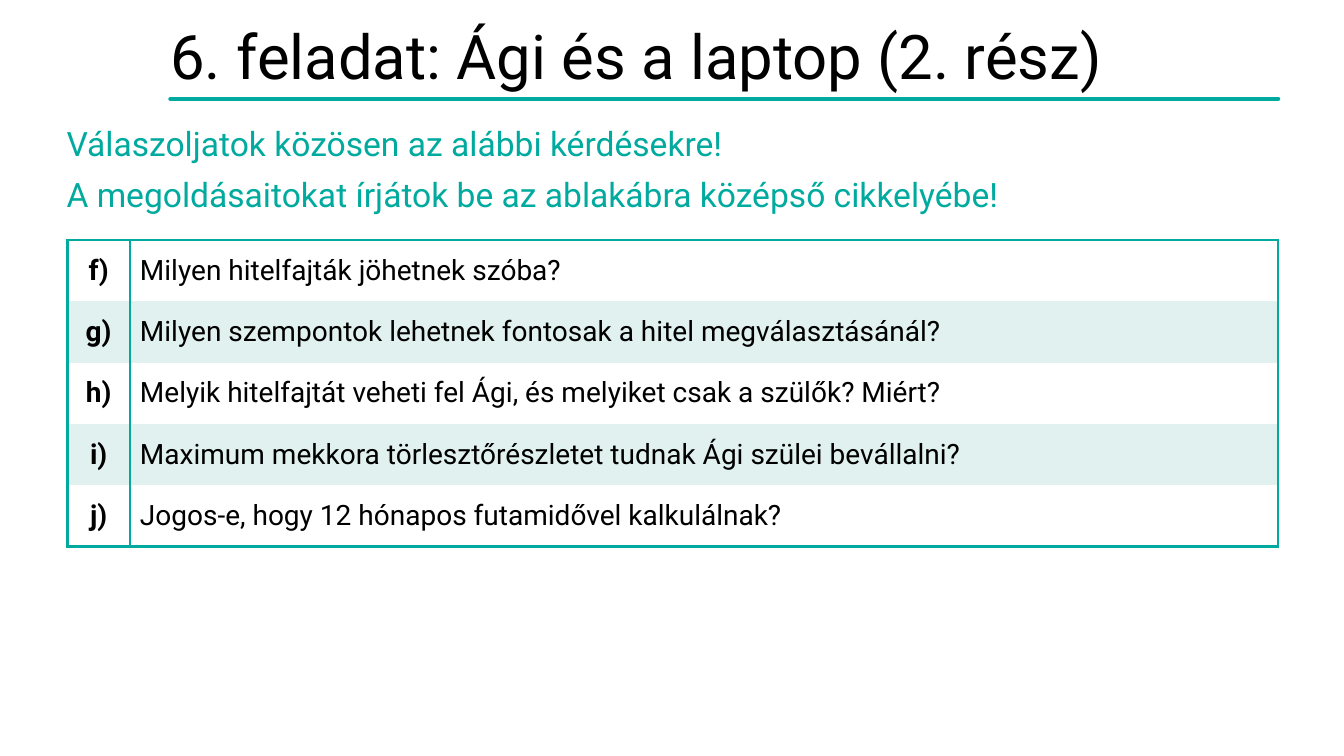
from dataclasses import dataclass

from lxml import etree
from pptx import Presentation
from pptx.dml.color import RGBColor
from pptx.enum.shapes import MSO_CONNECTOR
from pptx.enum.text import MSO_ANCHOR, PP_ALIGN
from pptx.oxml.ns import qn
from pptx.util import Pt

STRAIGHT = MSO_CONNECTOR.STRAIGHT
TOP, MIDDLE = MSO_ANCHOR.TOP, MSO_ANCHOR.MIDDLE
LEFT, CENTER = PP_ALIGN.LEFT, PP_ALIGN.CENTER

FONT = "Roboto"
COLORS = {"teal": "00AA9F", "mint": "E0F1EF", "white": "FFFFFF", "black": "000000"}
NO_STYLE = "{2D5ABB26-0587-4C30-8999-92F81FD0307C}"
BORDER = 2.25


@dataclass
class TextBlock:
    box: tuple[float, float, float, float]
    lines: list[str]
    size: float
    color: str
    anchor: int


@dataclass
class Question:
    label: str
    text: str


TEXTS = [
    TextBlock((47.5, 91.4, 865.4, 64), [
        "Válaszoljatok közösen az alábbi kérdésekre!",
        "A megoldásaitokat írjátok be az ablakábra középső cikkelyébe!",
    ], 24, "teal", TOP),
    TextBlock((121.7, 23.8, 790.6, 36.7), ["6. feladat: Ági és a laptop (2. rész)"],
              44, "black", MIDDLE),
]
QUESTIONS = [
    Question("f)", "Milyen hitelfajták jöhetnek szóba?"),
    Question("g)", "Milyen szempontok lehetnek fontosak a hitel megválasztásánál?"),
    Question("h)", "Melyik hitelfajtát veheti fel Ági, és melyiket csak a szülők? Miért?"),
    Question("i)", "Maximum mekkora törlesztőrészletet tudnak Ági szülei bevállalni?"),
    Question("j)", "Jogos-e, hogy 12 hónapos futamidővel kalkulálnak?"),
]
COL_WIDTHS = (44.6, 820.1)
ROW_HEIGHT = 43.8


def rgb(name: str) -> RGBColor:
    return RGBColor.from_string(COLORS[name])


def set_attrs(obj, values: dict) -> None:
    for name, value in values.items():
        setattr(obj, name, value)


def format_font(font, size: float, color: str, bold: bool = False) -> None:
    set_attrs(font, {"name": FONT, "size": Pt(size), "bold": bold})
    font.color.rgb = rgb(color)


def add_text(slide, block: TextBlock) -> None:
    tf = slide.shapes.add_textbox(*map(Pt, block.box)).text_frame
    set_attrs(tf, {"word_wrap": True, "vertical_anchor": block.anchor,
                   "margin_left": 0, "margin_right": 0,
                   "margin_top": 0, "margin_bottom": 0})
    for i, line in enumerate(block.lines):
        p = tf.add_paragraph() if i else tf.paragraphs[0]
        set_attrs(p, {"line_spacing": 0.9, "space_before": Pt(10 if i else 0)})
        r = p.add_run()
        r.text = line
        format_font(r.font, block.size, block.color)


def add_rule(slide, x1: float, x2: float, y: float) -> None:
    ln = slide.shapes.add_connector(STRAIGHT, Pt(x1), Pt(y), Pt(x2), Pt(y))
    ln.line.width = Pt(3)
    ln.line.color.rgb = rgb("teal")
    ln.line._get_or_add_ln().set("cap", "rnd")
    etree.SubElement(ln._element.spPr, qn("a:effectLst"))


def add_borders(cell, sides: str) -> None:
    # Borders come before the fill, in the order L, R, T, B
    tc_pr = cell._tc.get_or_add_tcPr()
    for i, side in enumerate("LRTB"):
        ln = etree.Element(qn(f"a:ln{side}"), w=str(Pt(BORDER)))
        if side in sides:
            fill = etree.SubElement(ln, qn("a:solidFill"))
            etree.SubElement(fill, qn("a:srgbClr"), val=COLORS["teal"])
        else:
            etree.SubElement(ln, qn("a:noFill"))
        tc_pr.insert(i, ln)


def add_questions(slide, x: float, y: float) -> None:
    last = len(QUESTIONS) - 1
    frame = slide.shapes.add_table(len(QUESTIONS), len(COL_WIDTHS), Pt(x), Pt(y),
                                   Pt(sum(COL_WIDTHS)), Pt(ROW_HEIGHT * len(QUESTIONS)))
    table = frame.table
    set_attrs(table, {"first_row": False, "horz_banding": False})
    table._tbl.tblPr.find(qn("a:tableStyleId")).text = NO_STYLE
    for column, width in zip(table.columns, COL_WIDTHS):
        column.width = Pt(width)

    for row, question in enumerate(QUESTIONS):
        table.rows[row].height = Pt(ROW_HEIGHT)
        sides = "LR" + ("T" if row == 0 else "") + ("B" if row == last else "")
        for col, text in enumerate((question.label, question.text)):
            is_label = col == 0
            cell = table.cell(row, col)
            cell.vertical_anchor = MIDDLE
            cell.fill.solid()
            cell.fill.fore_color.rgb = rgb("mint" if row % 2 else "white")
            p = cell.text_frame.paragraphs[0]
            p.alignment = CENTER if is_label else LEFT
            r = p.add_run()
            r.text = text
            format_font(r.font, 20, "black", bold=is_label)
            add_borders(cell, sides)


def main() -> None:
    prs = Presentation()
    set_attrs(prs, {"slide_width": Pt(960), "slide_height": Pt(540)})
    slide = prs.slides.add_slide(prs.slide_layouts[6])

    # Title rule, title and instructions
    add_rule(slide, 121.7, 913, 70.6)
    for block in TEXTS:
        add_text(slide, block)

    # Question table
    add_questions(slide, 48.2, 171.4)
    prs.save("out.pptx")


if __name__ == "__main__":
    main()
